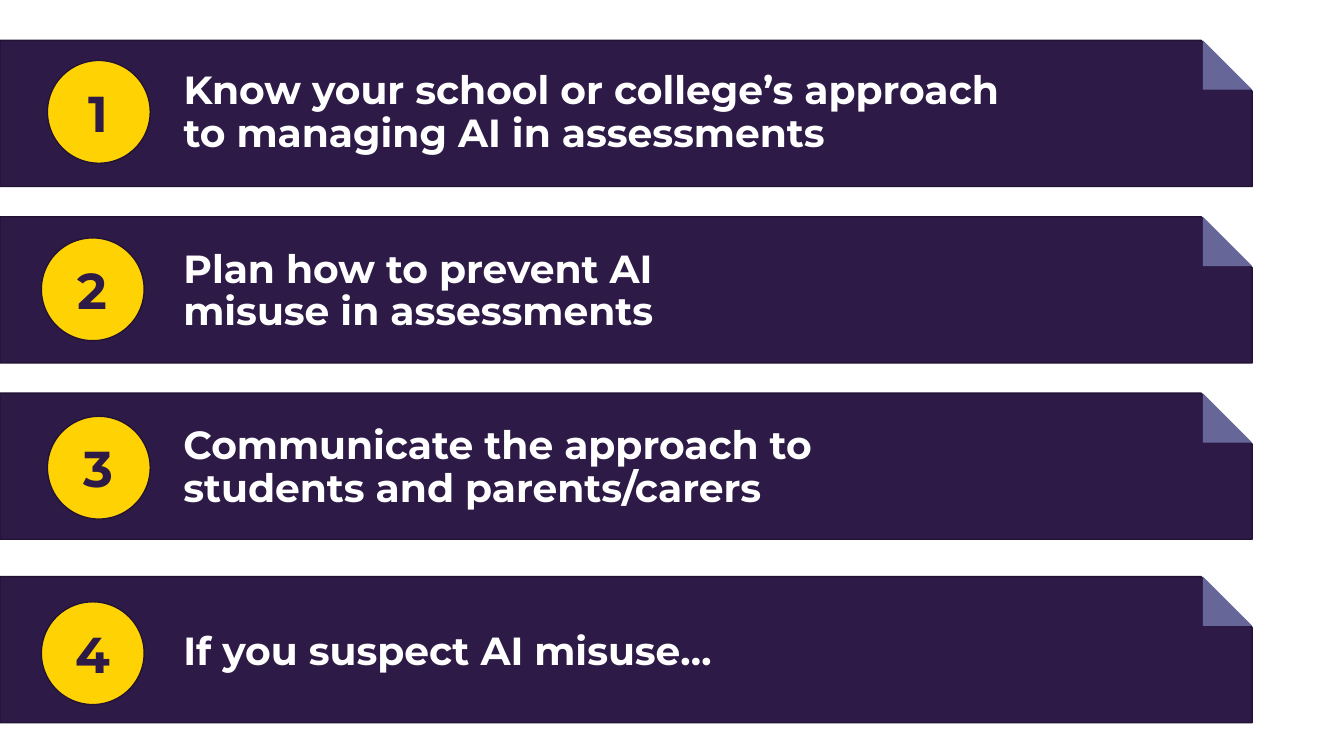
from pptx import Presentation
from pptx import util as u
from pptx.dml.color import RGBColor
from pptx.enum import shapes, text

PX = u.Inches(1) // 100
FONT = "Montserrat"
COLORS = {"navy": "2E1A46", "edge": "221334", "fold": "666699",
          "gold": "FFD203", "white": "FFFFFF"}
KIND = shapes.MSO_SHAPE
ALIGN = text.PP_ALIGN

WIDE, HIGH = 1242, 145
FOLD, DISC, INDENT = 49, 102, 172

HEAD = "Know your school or college’s approach to managing AI in assessments"
PLAN = "Plan how to prevent AI misuse in assessments"
SHARE = "Communicate the approach to students and parents/carers"
DOUBT = "If you suspect AI misuse…"

BANDS = [
    {"top": 40, "disc": (47, 20), "label": (0, 849), "words": HEAD},
    {"top": 215, "disc": (41, 21), "label": (2, 542), "words": PLAN},
    {"top": 390, "disc": (47, 23), "label": (2, 662), "words": SHARE},
    {"top": 572, "disc": (41, 25), "label": (3, 662), "words": DOUBT},
]


def color(name):
    """Return the named colour."""
    return RGBColor.from_string(COLORS[name])


def scale(box):
    """Turn a box in px into EMU."""
    return [side * PX for side in box]


def draw(group, kind, box, fill, edge=None):
    """Add a filled shape, outlined if an edge colour is given."""
    item = group.shapes.add_shape(kind, *scale(box))
    item.shadow.inherit = False
    item.fill.solid()
    item.fill.fore_color.rgb = color(fill)
    if edge:
        item.line.color.rgb = color(edge)
        item.line.width = u.Pt(1)
    else:
        item.line.fill.background()
    return item


def write(item, words, size, tint, align, spacing=1.0):
    """Write one bold, vertically centred paragraph."""
    frame = item.text_frame
    frame.word_wrap = True
    frame.auto_size = text.MSO_AUTO_SIZE.NONE
    frame.vertical_anchor = text.MSO_ANCHOR.MIDDLE
    para = frame.paragraphs[0]
    para.text = words
    para.alignment = align
    para.line_spacing = spacing
    para.font.name = FONT
    para.font.size = u.Pt(size)
    para.font.bold = True
    para.font.color.rgb = color(tint)


def banner(group, box):
    """Draw a band with its top right corner folded."""
    left, top, width, height = box
    band = draw(group, KIND.SNIP_1_RECTANGLE, box, "navy", "edge")
    band.adjustments[0] = 0.35
    corner = (left + width - FOLD, top, FOLD, FOLD)
    draw(group, KIND.RIGHT_TRIANGLE, corner, "fold")


def badge(group, box, number):
    """Draw a numbered disc."""
    disc = draw(group, KIND.OVAL, box, "gold", "edge")
    write(disc, str(number), 36, "navy", ALIGN.CENTER)


def title(slide, box):
    """Bring the title placeholder to the front and place it."""
    item = slide.shapes.title
    slide.shapes.element.append(item.element)
    item.left, item.top, item.width, item.height = scale(box)
    return item


def step(slide, box, number, band):
    """Draw one step; the first carries the slide title."""
    left, top, width, height = box
    across, down = band["disc"]
    shift, span = band["label"]
    place = (left + INDENT, top + shift, span, height)
    group = slide.shapes.add_group_shape()
    banner(group, box)
    badge(group, (left + across, top + down, DISC, DISC), number)
    if number == 1:
        label = title(slide, place)
    else:
        label = group.shapes.add_textbox(*scale(place))
    write(label, band["words"], 28, "white", ALIGN.LEFT, 0.9)


def main():
    """Build the slide of four steps."""
    deck = Presentation()
    deck.slide_width, deck.slide_height = scale((1333, 750))
    slide = deck.slides.add_slide(deck.slide_layouts[5])
    for number, band in enumerate(BANDS, 1):
        step(slide, (0, band["top"], WIDE, HIGH), number, band)
    deck.save("out.pptx")


if __name__ == "__main__":
    main()
